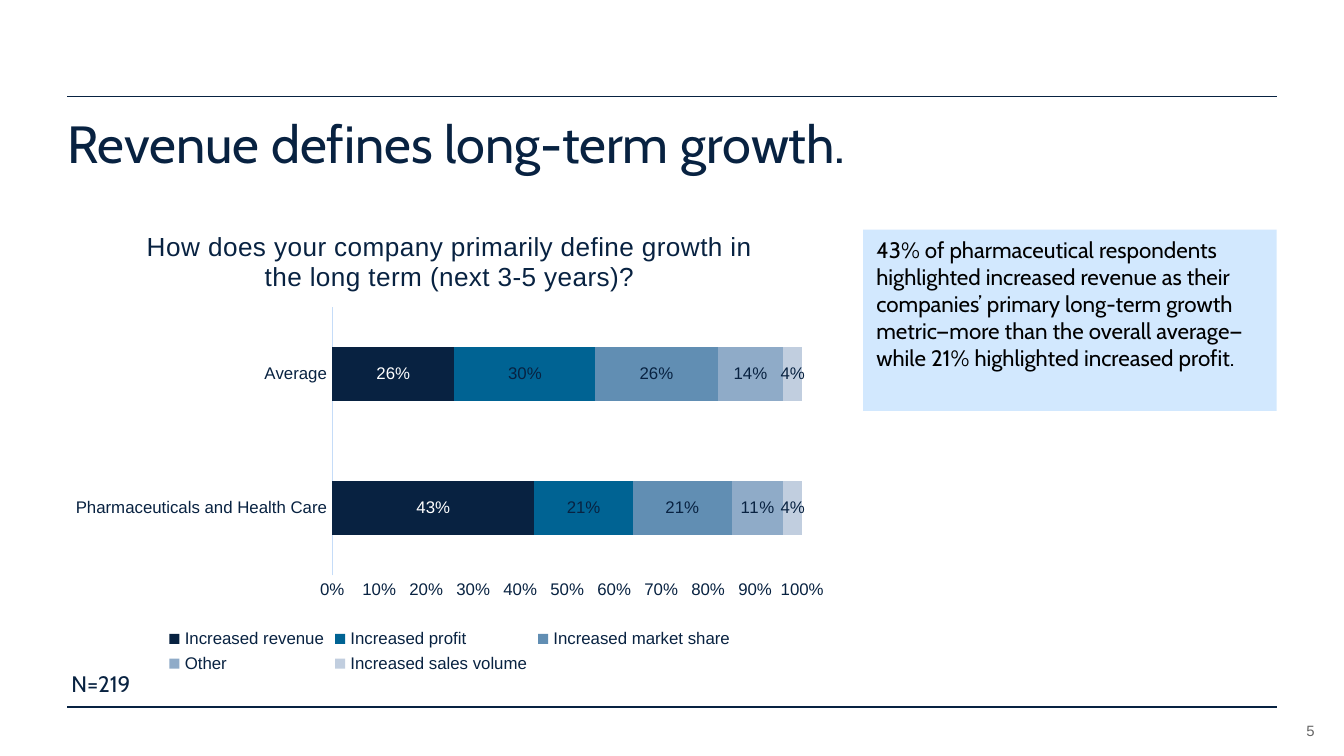
from dataclasses import dataclass

from lxml import etree
from pptx import Presentation
from pptx.chart.data import CategoryChartData
from pptx.dml.color import RGBColor
from pptx.enum.chart import XL_CHART_TYPE, XL_LABEL_POSITION, XL_LEGEND_POSITION, XL_TICK_MARK
from pptx.enum.shapes import MSO_CONNECTOR, MSO_SHAPE
from pptx.enum.text import MSO_ANCHOR, PP_ALIGN
from pptx.oxml import parse_xml
from pptx.oxml.ns import nsdecls, qn
from pptx.util import Pt

STACKED_BAR = XL_CHART_TYPE.BAR_STACKED_100
LABEL_CENTER = XL_LABEL_POSITION.CENTER
LEGEND_BOTTOM = XL_LEGEND_POSITION.BOTTOM
NO_TICK = XL_TICK_MARK.NONE
STRAIGHT = MSO_CONNECTOR.STRAIGHT
RECTANGLE = MSO_SHAPE.RECTANGLE
TOP, BOTTOM = MSO_ANCHOR.TOP, MSO_ANCHOR.BOTTOM
LEFT, RIGHT = PP_ALIGN.LEFT, PP_ALIGN.RIGHT

EMU_PER_PX = 914400 / 192
SLIDE_WIDTH, SLIDE_HEIGHT = 1920, 1080
MARGIN = 96
CONTENT_WIDTH = SLIDE_WIDTH - 2 * MARGIN

CATEGORIES = ["Pharmaceuticals and Health Care", "Average"]
SERIES = {
    "Increased revenue": (0.43, 0.26),
    "Increased profit": (0.21, 0.3),
    "Increased market share": (0.21, 0.26),
    "Other": (0.11, 0.14),
    "Increased sales volume": (0.04, 0.04),
}


@dataclass(frozen=True)
class Theme:
    navy: str = "082241"
    black: str = "000000"
    white: str = "FFFFFF"
    grey: str = "666666"
    callout: str = "D2E8FE"
    axis: str = "C5DCF8"
    series: tuple = ("082241", "006393", "618EB3", "8FABC8", "C1CEDF")
    text_font: str = "Cabin"
    chart_font: str = "Arial"
    title_size: int = 28
    chart_title_size: int = 14
    body_size: int = 12
    chart_size: int = 9
    page_size: int = 8
    line_width: float = 0.75


def px(length):
    return round(length * EMU_PER_PX)


def set_font(font, name, size, color):
    font.name = name
    font.size = Pt(size)
    font.bold = False
    font.color.rgb = RGBColor.from_string(color)


def manual_layout(x, y, width, height):
    """Return an inner plot layout given in fractions of the chart's size."""
    layout = parse_xml(f"<c:layout {nsdecls('c')}><c:manualLayout/></c:layout>")
    settings = {"layoutTarget": "inner", "xMode": "edge", "yMode": "edge",
                "x": x, "y": y, "w": width, "h": height}
    for tag, value in settings.items():
        etree.SubElement(layout[0], qn(f"c:{tag}")).set("val", str(value))
    return layout


class SlideBuilder:
    def __init__(self, slide, theme):
        self.slide = slide
        self.theme = theme

    def rule(self, y):
        line = self.slide.shapes.add_connector(
            STRAIGHT, px(MARGIN), px(y), px(MARGIN + CONTENT_WIDTH), px(y))
        line.line.color.rgb = RGBColor.from_string(self.theme.navy)
        line.line.width = Pt(self.theme.line_width)
        etree.SubElement(line._element.spPr, qn("a:effectLst"))

    def fill_text(self, shape, text, size, color, font=None, align=LEFT,
                  anchor=TOP, inset=(19, 10), spacing=None):
        frame = shape.text_frame
        frame.word_wrap = True
        frame.vertical_anchor = anchor
        frame.margin_left = frame.margin_right = px(inset[0])
        frame.margin_top = frame.margin_bottom = px(inset[1])
        frame.text = text
        paragraph = frame.paragraphs[0]
        paragraph.alignment = align
        paragraph.line_spacing = spacing
        set_font(paragraph.runs[0].font, font or self.theme.text_font, size, color)

    def text(self, box, text, size, color, **style):
        shape = self.slide.shapes.add_textbox(*map(px, box))
        self.fill_text(shape, text, size, color, **style)

    def callout(self, box, text):
        shape = self.slide.shapes.add_shape(RECTANGLE, *map(px, box))
        shape.shadow.inherit = False
        shape.fill.solid()
        shape.fill.fore_color.rgb = RGBColor.from_string(self.theme.callout)
        shape.line.fill.background()
        self.fill_text(shape, text, self.theme.body_size, self.theme.black)

    def chart_text(self, font, color=None, size=None):
        set_font(font, self.theme.chart_font, size or self.theme.chart_size,
                 color or self.theme.navy)

    def chart(self, box, title, categories, series):
        data = CategoryChartData(number_format="0%")
        data.categories = categories
        for name, values in series.items():
            data.add_series(name, values)
        chart = self.slide.shapes.add_chart(STACKED_BAR, *map(px, box), data).chart
        self.chart_text(chart.font)
        self.chart_title(chart, title)
        self.chart_axes(chart)
        self.chart_series(chart.plots[0])
        chart.has_legend = True
        chart.legend.position = LEGEND_BOTTOM
        chart.legend.include_in_layout = False
        self.chart_text(chart.legend.font)
        plot_area = chart._chartSpace.chart.plotArea
        for layout in plot_area.findall(qn("c:layout")):
            plot_area.remove(layout)
        plot_area.insert(0, manual_layout(0.35, 0.21, 0.6, 0.57))

    def chart_title(self, chart, title):
        chart.has_title = True
        frame = chart.chart_title.text_frame
        frame.text = title
        run = frame.paragraphs[0].runs[0]
        self.chart_text(run.font, size=self.theme.chart_title_size)
        run.font._element.set("spc", "10")
        chart.chart_title.include_in_layout = False

    def chart_axes(self, chart):
        for axis in (chart.category_axis, chart.value_axis):
            axis.major_tick_mark = axis.minor_tick_mark = NO_TICK
            axis.has_major_gridlines = False
            self.chart_text(axis.tick_labels.font)
        axis_line = chart.category_axis.format.line
        axis_line.color.rgb = RGBColor.from_string(self.theme.axis)
        axis_line.width = Pt(self.theme.line_width)
        values = chart.value_axis
        values.format.line.fill.background()
        values.minimum_scale, values.maximum_scale = 0, 1
        values.major_unit = 0.1
        values.tick_labels.number_format = "0%"
        values.tick_labels.number_format_is_linked = False

    def chart_series(self, plot):
        plot.gap_width = 150
        plot.overlap = 100
        plot.vary_by_categories = False
        for index, (series, color) in enumerate(zip(plot.series, self.theme.series)):
            series.format.fill.solid()
            series.format.fill.fore_color.rgb = RGBColor.from_string(color)
            labels = series.data_labels
            labels.show_value = True
            labels.position = LABEL_CENTER
            labels.number_format = "0%"
            labels.number_format_is_linked = False
            self.chart_text(labels.font, self.theme.navy if index else self.theme.white)


def main():
    presentation = Presentation()
    presentation.slide_width = px(SLIDE_WIDTH)
    presentation.slide_height = px(SLIDE_HEIGHT)
    theme = Theme()
    builder = SlideBuilder(
        presentation.slides.add_slide(presentation.slide_layouts[6]), theme)

    for y in (138, 1010):
        builder.rule(y)
    builder.text((1788, 1021, 90, 35), "5", theme.page_size, theme.grey,
                 font=theme.chart_font, align=RIGHT, anchor=BOTTOM, inset=(0, 0))
    builder.text((MARGIN, 169, CONTENT_WIDTH, 106), "Revenue defines long-term growth.",
                 theme.title_size, theme.navy, inset=(0, 0), spacing=0.9)
    builder.callout(
        (1233, 328, 591, 259),
        "43% of pharmaceutical respondents highlighted increased revenue as their "
        "companies’ primary long-term growth metric—more than the overall average—"
        "while 21% highlighted increased profit.")
    builder.text((83, 948, 317, 58), "N=219", theme.body_size, theme.navy)
    builder.chart(
        (83, 298, 1119, 672),
        "How does your company primarily define growth in the long term (next 3-5 years)?",
        CATEGORIES, SERIES)
    presentation.save("out.pptx")


if __name__ == "__main__":
    main()
